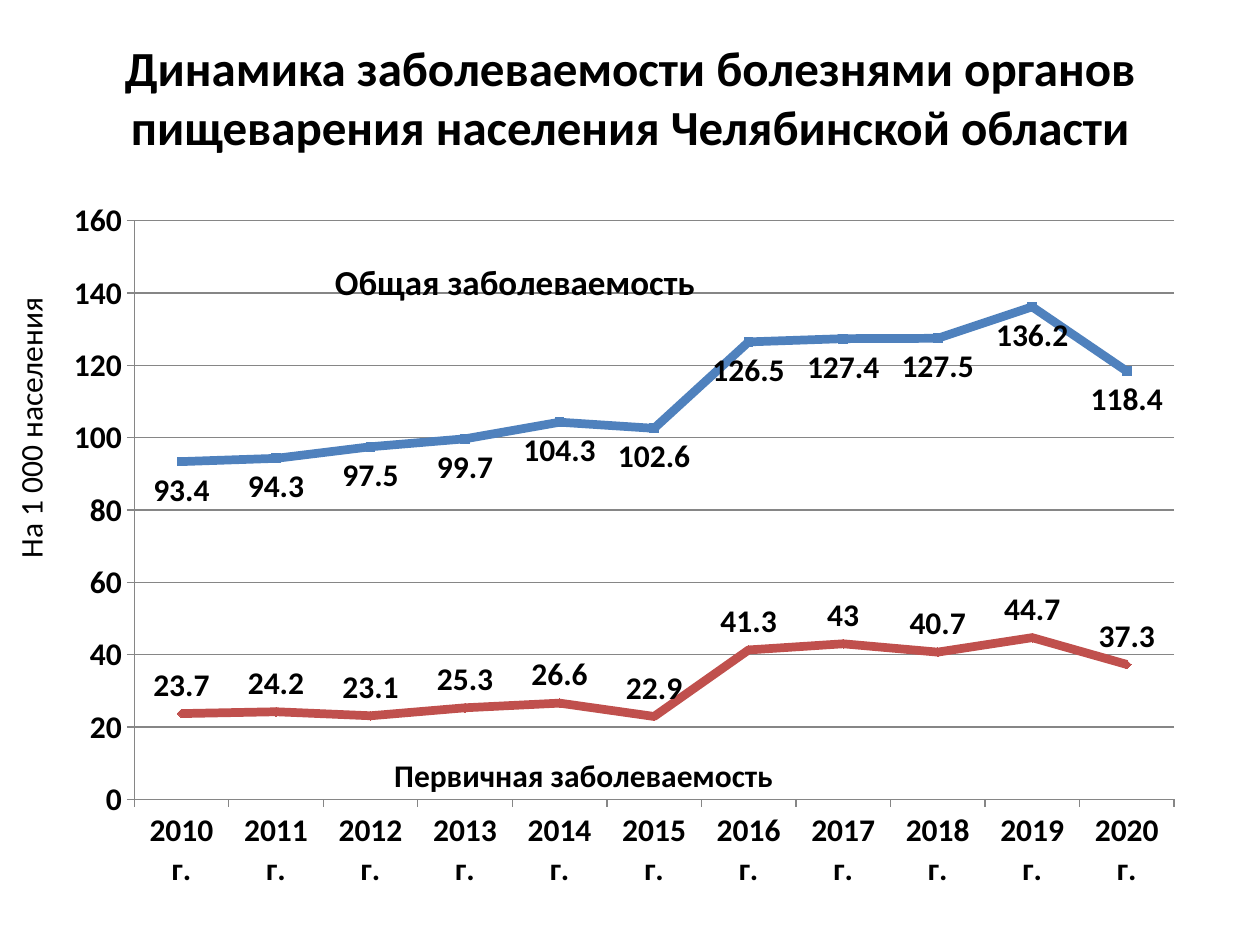
import pptx
import pptx.util
import pptx.chart.data
from lxml import etree
from pptx.dml.color import RGBColor
from pptx.enum.chart import XL_CHART_TYPE, XL_LABEL_POSITION, XL_MARKER_STYLE, XL_TICK_MARK
from pptx.enum.text import MSO_ANCHOR, MSO_AUTO_SIZE, PP_ALIGN
from pptx.oxml import parse_xml
from pptx.oxml.ns import nsdecls

Pt = pptx.util.Pt

BLACK = RGBColor(0x00, 0x00, 0x00)
BLUE = RGBColor(0x4F, 0x81, 0xBD)
RED = RGBColor(0xC0, 0x50, 0x4D)
GREY = RGBColor(0x86, 0x86, 0x86)
FONT = "Calibri"

TITLE = "Динамика заболеваемости болезнями органов пищеварения населения Челябинской области"
YEARS = [f"{year} г." for year in range(2010, 2021)]
MORBIDITY = [
    ("Series 1", [93.4, 94.3, 97.5, 99.7, 104.3, 102.6, 126.5, 127.4, 127.5, 136.2, 118.4],
     BLUE, XL_MARKER_STYLE.SQUARE, XL_LABEL_POSITION.BELOW),
    ("Series 2", [23.7, 24.2, 23.1, 25.3, 26.6, 22.9, 41.3, 43, 40.7, 44.7, 37.3],
     RED, XL_MARKER_STYLE.DIAMOND, XL_LABEL_POSITION.ABOVE),
]
CAPTIONS = [
    ("На 1 000 населения", (-65.5, 229, 165.6, 28.8), 18, False, 270, True),
    ("Общая заболеваемость", (184.3, 145.4, 238.3, 31.7), 20, True, 0, True),
    ("Первичная заболеваемость", (218.2, 428.4, 242.6, 28.8), 18, True, 0, False),
]
CHART_BOX = (31, 105.8, 653, 408.2)
PLOT_LAYOUT = {"x": 0.07, "y": 0.05, "w": 0.91, "h": 0.81}


def style(font, size, bold):
    font.name = FONT
    font.size = Pt(size)
    font.bold = bold
    font.color.rgb = BLACK


def add_text(slide, text, box, size, bold, rotation=0, wrap=True):
    caption = slide.shapes.add_textbox(*map(Pt, box))
    caption.rotation = rotation
    frame = caption.text_frame
    frame.text = text
    frame.word_wrap = wrap
    frame.auto_size = MSO_AUTO_SIZE.SHAPE_TO_FIT_TEXT
    style(frame.paragraphs[0].runs[0].font, size, bold)
    return frame


def add_morbidity_chart(slide):
    data = pptx.chart.data.CategoryChartData()
    data.categories = YEARS
    for name, values, *_ in MORBIDITY:
        data.add_series(name, values)
    chart = slide.shapes.add_chart(XL_CHART_TYPE.LINE_MARKERS, *map(Pt, CHART_BOX), data).chart
    chart.has_legend = False
    chart.has_title = False
    style(chart.font, 18, False)

    for axis in (chart.category_axis, chart.value_axis):
        axis.major_tick_mark = XL_TICK_MARK.OUTSIDE
        axis.format.line.color.rgb = GREY
        style(axis.tick_labels.font, 18, True)
    chart.value_axis.minimum_scale = 0
    chart.value_axis.maximum_scale = 160
    chart.value_axis.major_unit = 20
    chart.value_axis.has_major_gridlines = True
    chart.value_axis.major_gridlines.format.line.color.rgb = GREY

    plot = chart.plots[0]
    plot.vary_by_categories = False
    for series, (_, _, color, marker, position) in zip(plot.series, MORBIDITY):
        series.smooth = False
        series.format.line.color.rgb = color
        series.format.line.width = Pt(5)
        series.marker.style = marker
        series.marker.size = 5
        series.marker.format.fill.solid()
        series.marker.format.fill.fore_color.rgb = color
        series.marker.format.line.color.rgb = color
        labels = series.data_labels
        labels.show_value = True
        labels.position = position
        style(labels.font, 18, True)

    plot_area = chart.element.chart.plotArea
    for layout in plot_area.findall("{*}layout"):
        plot_area.remove(layout)
    modes = "".join(f'<c:{side}Mode val="edge"/>' for side in "xy")
    sizes = "".join(f'<c:{side} val="{share}"/>' for side, share in PLOT_LAYOUT.items())
    plot_area.insert(0, parse_xml(
        f'<c:layout {nsdecls("c")}><c:manualLayout><c:layoutTarget val="inner"/>'
        f"{modes}{sizes}</c:manualLayout></c:layout>"))


def main():
    deck = pptx.Presentation()
    deck.slide_width, deck.slide_height = Pt(720), Pt(540)
    slide = deck.slides.add_slide(deck.slide_layouts[6])
    title = add_text(slide, TITLE, (36, 27.4, 648, 55.4), 28, True)
    title.auto_size = MSO_AUTO_SIZE.NONE
    title.vertical_anchor = MSO_ANCHOR.MIDDLE
    title.paragraphs[0].alignment = PP_ALIGN.CENTER
    add_morbidity_chart(slide)
    for caption in CAPTIONS:
        add_text(slide, *caption)
    deck.save("out.pptx")


if __name__ == "__main__":
    main()
